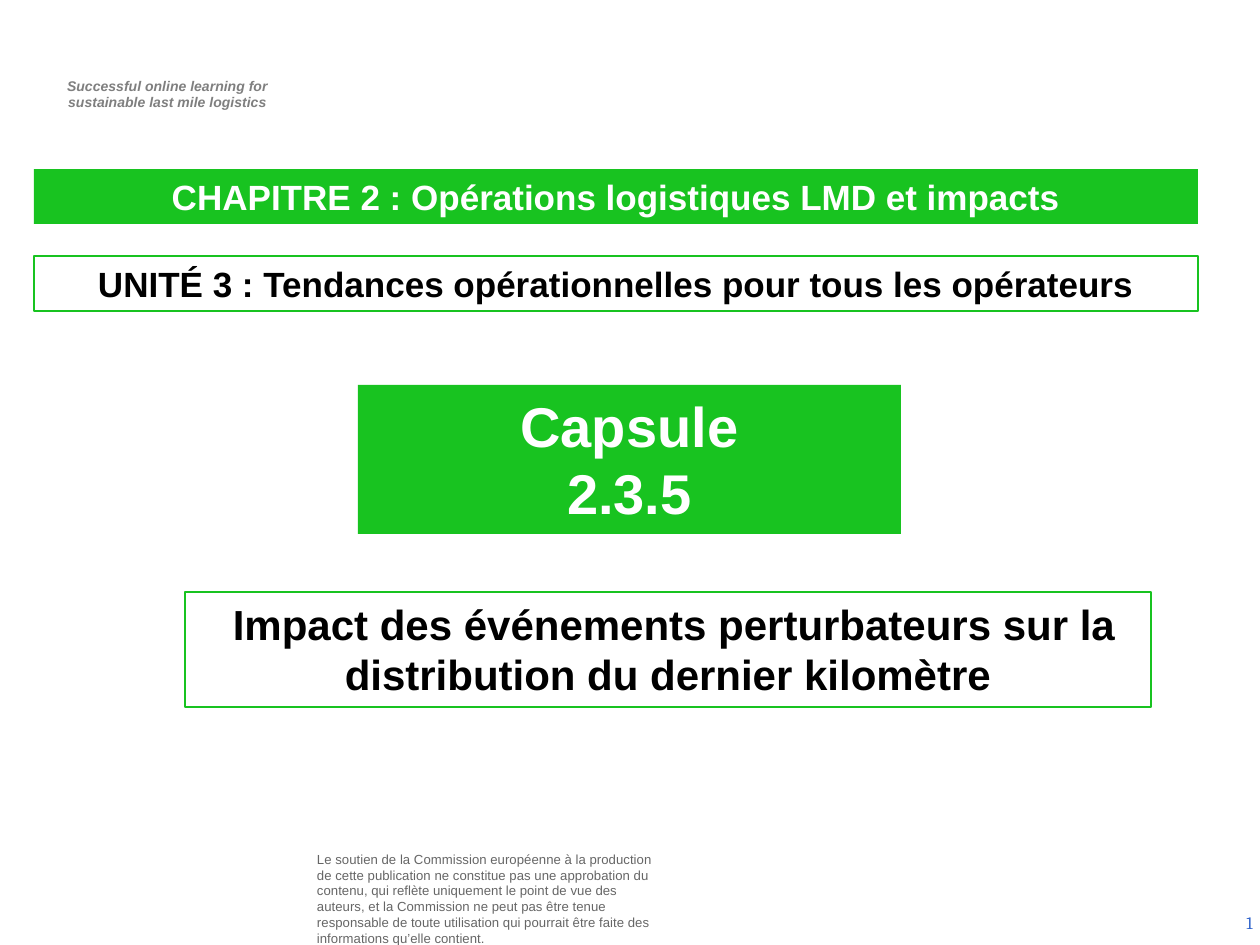
from pptx import Presentation
from pptx.dml.color import RGBColor
from pptx.enum.shapes import MSO_SHAPE
from pptx.enum.text import MSO_ANCHOR, PP_ALIGN
from pptx.util import Emu, Pt

RECT = MSO_SHAPE.RECTANGLE
TOP, MIDDLE = MSO_ANCHOR.TOP, MSO_ANCHOR.MIDDLE
LEFT, CENTER, RIGHT = PP_ALIGN.LEFT, PP_ALIGN.CENTER, PP_ALIGN.RIGHT

COLORS = {
    "green": "18C320",
    "white": "FFFFFF",
    "black": "000000",
    "tagline": "7F7F7F",
    "notice": "666666",
    "number": "3366CC",
}


def px(n):
    return Emu(round(n * 914400 / 126))


def rgb(name):
    return RGBColor.from_string(COLORS[name])


class Deck:
    """Holds the style and the current slide."""

    font = "Arial"

    def __init__(self, width, height):
        self.prs = Presentation()
        self.prs.slide_width, self.prs.slide_height = px(width), px(height)
        self.s = self.prs.slides.add_slide(self.prs.slide_layouts[6])

    def set_text(self, sp, lines, size, color, align=CENTER, anchor=TOP,
                 bold=False, italic=False, font=None, margin=0, indent=0):
        tf = sp.text_frame
        tf.word_wrap = True
        tf.vertical_anchor = anchor
        tf.text = "\n".join(lines)
        for p in tf.paragraphs:
            p.alignment = align
            pPr = p._p.get_or_add_pPr()
            pPr.set("marL", str(px(margin)))
            pPr.set("indent", str(px(indent)))
            p.font.name = font or self.font
            p.font.size = Pt(size)
            p.font.bold, p.font.italic = bold, italic
            p.font.color.rgb = rgb(color)

    def text(self, box, lines, size, color, inset=None, **style):
        sp = self.s.shapes.add_textbox(*map(px, box))
        self.set_text(sp, lines, size, color, **style)
        if inset is not None:
            tf = sp.text_frame
            tf.margin_left = tf.margin_right = px(inset)
            tf.margin_top = tf.margin_bottom = px(inset)

    def banner(self, box, lines, size, outline=None, **style):
        """A solid green box, or a green outline of the given width."""
        sp = self.s.shapes.add_shape(RECT, *map(px, box))
        sp.shadow.inherit = False
        if outline:
            sp.fill.background()
            sp.line.color.rgb = rgb("green")
            sp.line.width = Pt(outline)
        else:
            sp.fill.solid()
            sp.fill.fore_color.rgb = rgb("green")
            sp.line.fill.background()
        self.set_text(sp, lines, size, "black" if outline else "white",
                      bold=True, **style)


def main():
    deck = Deck(1260, 945)

    # Project tagline and funding notice
    deck.text((37, 71, 256, 47),
              ["Successful online learning for",
               "sustainable last mile logistics"],
              8, "tagline", bold=True, italic=True, margin=5)
    deck.text((312, 867, 354, 63),
              ["Le soutien de la Commission européenne à la production de cette "
               "publication ne constitue pas une approbation du contenu, qui "
               "reflète uniquement le point de vue des auteurs, et la Commission "
               "ne peut pas être tenue responsable de toute utilisation qui "
               "pourrait être faite des informations qu’elle contient."],
              7.5, "notice", inset=5, align=LEFT, anchor=MIDDLE)

    # Slide number
    deck.text((971, 898, 294, 50), ["1"], 10, "number",
              align=RIGHT, anchor=MIDDLE, font="Cambria")

    # Capsule number and title
    deck.banner((358, 385, 543, 149), ["Capsule", "2.3.5"], 32)
    deck.banner((185, 592, 966, 115),
                ["Impact des événements perturbateurs sur la distribution "
                 "du dernier kilomètre"],
                24, outline=1.5, indent=12)

    # Chapter and unit
    deck.banner((34, 169, 1164, 55),
                ["CHAPITRE 2 : Opérations logistiques LMD et impacts"], 20)
    deck.banner((34, 256, 1164, 55),
                ["UNITÉ 3 : Tendances opérationnelles pour tous les opérateurs"],
                20, outline=0.75)

    deck.prs.save("out.pptx")


if __name__ == "__main__":
    main()
